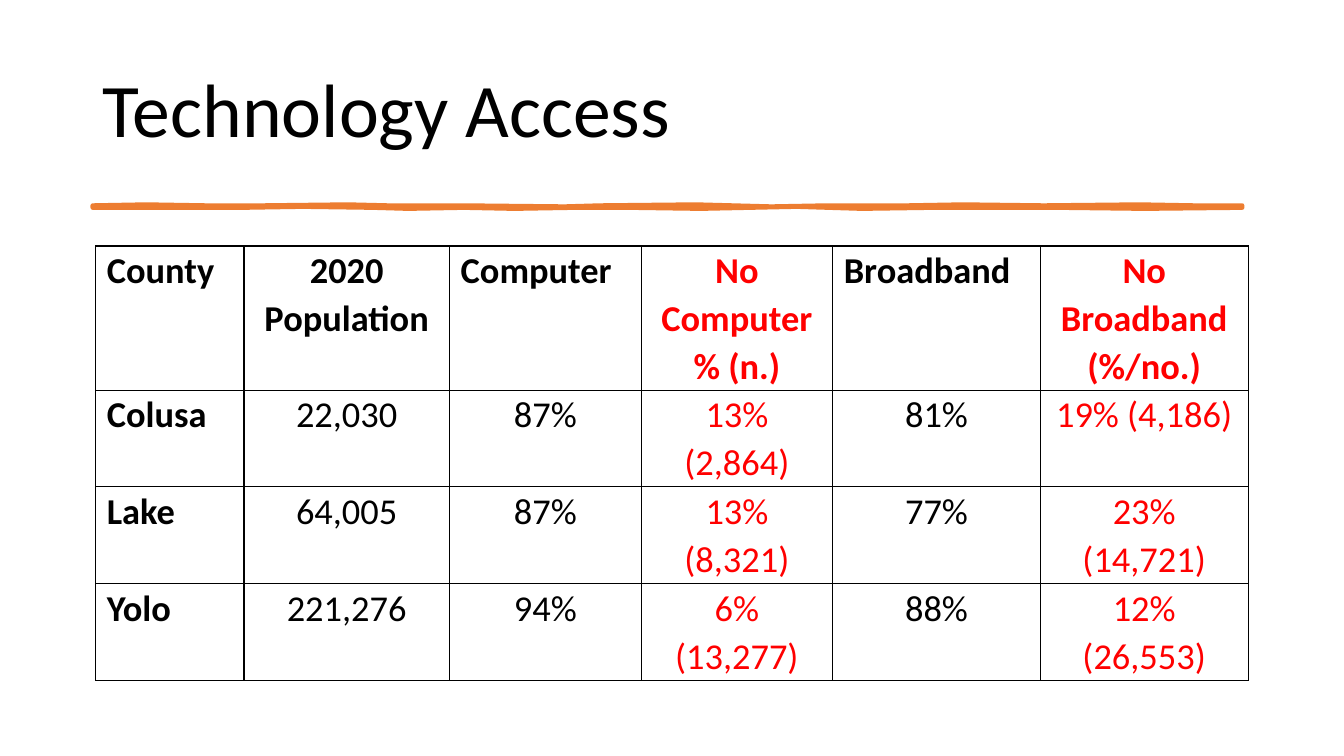
from dataclasses import dataclass

from lxml import etree
from pptx import Presentation
from pptx.dml.color import RGBColor
from pptx.enum.text import MSO_ANCHOR, MSO_AUTO_SIZE, PP_ALIGN
from pptx.oxml.ns import qn
from pptx.util import Emu, Pt

PX = 9144
LEFT = PP_ALIGN.LEFT
CENTER = PP_ALIGN.CENTER
MIDDLE = MSO_ANCHOR.MIDDLE
NO_AUTOFIT = MSO_AUTO_SIZE.NONE
TITLE_ONLY = 5


@dataclass(frozen=True)
class Theme:
    font: str = "Calibri"
    ink: str = "000000"
    alert: str = "FF0000"
    accent: str = "ED7D31"
    title_size: int = 54
    table_size: int = 26
    border_width: int = 1
    stroke_width: float = 3.25


THEME = Theme()

COLUMN_WIDTHS = (147, 204, 190, 190, 206, 206)
ROW_HEIGHTS = (143, 96, 96, 96)
ALERT_COLUMNS = (3, 5)
LEFT_HEADERS = (0, 2, 4)
ACCESS_ROWS = (
    ("County", "2020 Population", "Computer", "No Computer % (n.)",
     "Broadband", "No Broadband (%/no.)"),
    ("Colusa", "22,030", "87%", "13% (2,864)", "81%", "19% (4,186)"),
    ("Lake", "64,005", "87%", "13% (8,321)", "77%", "23% (14,721)"),
    ("Yolo", "221,276", "94%", "6% (13,277)", "88%", "12% (26,553)"),
)

BRUSH_TOP = (
    (92, 204), (145, 203), (205, 204), (260, 204), (345, 203), (385, 204),
    (460, 204), (560, 205), (595, 204), (690, 203), (765, 205), (820, 204),
    (900, 204), (955, 203), (1035, 204), (1130, 203), (1185, 204), (1232, 204),
)
BRUSH_BOTTOM = (
    (1232, 206), (1135, 207), (1050, 206), (970, 206), (925, 206), (855, 207),
    (790, 205), (695, 207), (625, 206), (570, 206), (510, 207), (460, 206),
    (405, 207), (370, 206), (300, 205), (240, 206), (150, 206), (92, 206),
)


def px(length):
    return Emu(length * PX)


def write_text(frame, text, *, size, color=THEME.ink, bold=False,
               align=LEFT, spacing=1.0):
    para = frame.paragraphs[0]
    para.alignment = align
    para.line_spacing = spacing
    span = para.add_run()
    span.text = text
    span.font.name = THEME.font
    span.font.size = Pt(size)
    span.font.bold = bold
    span.font.color.rgb = RGBColor.from_string(color)


def add_title(page, text, left, top, width, height):
    title = page.shapes.title
    title.left, title.top = px(left), px(top)
    title.width, title.height = px(width), px(height)
    frame = title.text_frame
    frame.word_wrap = True
    frame.auto_size = NO_AUTOFIT
    frame.vertical_anchor = MIDDLE
    write_text(frame, text, size=THEME.title_size, spacing=0.9)


def add_brush_stroke(page, points):
    builder = page.shapes.build_freeform(*points[0], scale=PX)
    builder.add_line_segments(points[1:], close=True)
    stroke = builder.convert_to_shape()
    stroke.shadow.inherit = False
    color = RGBColor.from_string(THEME.accent)
    stroke.fill.solid()
    stroke.fill.fore_color.rgb = color
    stroke.line.color.rgb = color
    stroke.line.width = Pt(THEME.stroke_width)


def draw_borders(cell):
    properties = cell._tc.get_or_add_tcPr()
    for side in ("lnL", "lnR", "lnT", "lnB"):
        border = etree.SubElement(properties, qn(f"a:{side}"),
                                  w=str(Pt(THEME.border_width)))
        fill = etree.SubElement(border, qn("a:solidFill"))
        etree.SubElement(fill, qn("a:srgbClr"), val=THEME.ink)


def format_cell(cell, text, row, column):
    cell.margin_left = cell.margin_right = px(11)
    cell.margin_top = cell.margin_bottom = 0
    draw_borders(cell)
    cell.fill.background()
    is_left = column == 0 or (row == 0 and column in LEFT_HEADERS)
    write_text(
        cell.text_frame, text, size=THEME.table_size,
        color=THEME.alert if column in ALERT_COLUMNS else THEME.ink,
        bold=row == 0 or column == 0,
        align=LEFT if is_left else CENTER, spacing=1.07)


def add_access_table(page, left, top):
    table = page.shapes.add_table(
        len(ROW_HEIGHTS), len(COLUMN_WIDTHS), px(left), px(top),
        px(sum(COLUMN_WIDTHS)), px(sum(ROW_HEIGHTS))).table
    table.first_row = False
    table.horz_banding = False
    for column, width in zip(table.columns, COLUMN_WIDTHS):
        column.width = px(width)
    for row, height in zip(table.rows, ROW_HEIGHTS):
        row.height = px(height)
    for row, values in enumerate(ACCESS_ROWS):
        for column, text in enumerate(values):
            format_cell(table.cell(row, column), text, row, column)


def main():
    deck = Presentation()
    deck.slide_width, deck.slide_height = px(1333), px(750)
    page = deck.slides.add_slide(deck.slide_layouts[TITLE_ONLY])
    add_title(page, "Technology Access", 92, 40, 1150, 145)
    add_brush_stroke(page, BRUSH_TOP + BRUSH_BOTTOM)
    add_access_table(page, 95, 244)
    deck.save("out.pptx")


if __name__ == "__main__":
    main()
